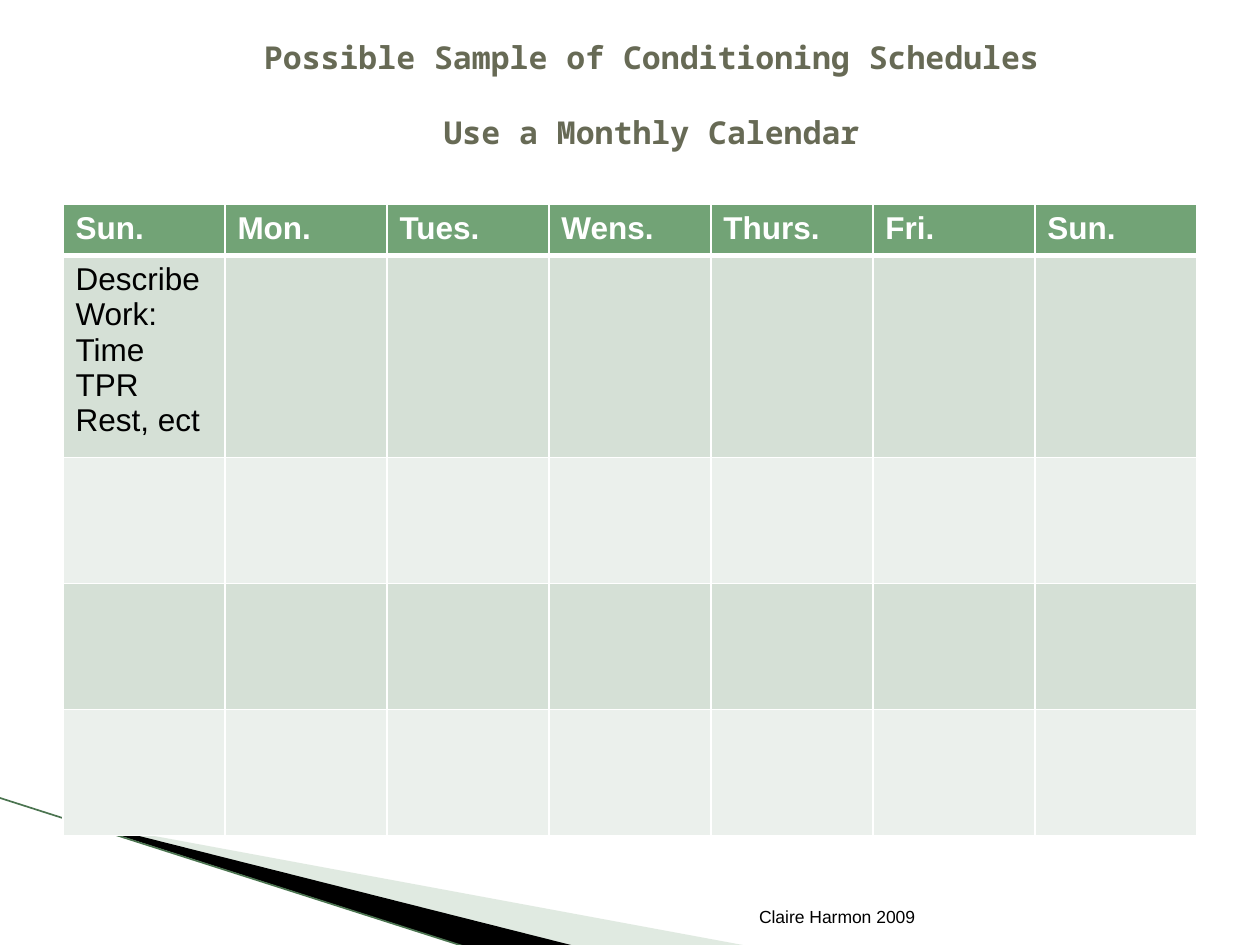
import pptx
import pptx.util
import pptx.dml.color
import pptx.enum.shapes
import pptx.enum.text
import pptx.oxml
import pptx.oxml.ns
from lxml import etree

WIDTH, HEIGHT = 10, 7.5
COLORS = {
    "white": "FFFFFF", "black": "000000", "title": "676A55", "header": "72A376",
    "odd": "D5E0D6", "even": "EBF0EC", "wedge": "B3CBB5", "line": "4B7450",
}
TITLE = ["Possible Sample of Conditioning Schedules", "Use a Monthly Calendar"]
DAYS = ["Sun.", "Mon.", "Tues.", "Wens.", "Thurs.", "Fri.", "Sun."]
FIRST_DAY = ["Describe", "Work:", "Time", "TPR", "Rest, ect"]
FOOTER = ["Claire Harmon 2009"]
ROW_HEIGHTS = [0.41, 1.6, 1, 1, 1]
TABLE_LEFT, TABLE_TOP, TABLE_WIDTH = 0.5, 1.62, 9
WEDGES = [
    ("wedge", 40, [(0.55, 6.51), (5.95, 7.51), (4.56, 7.51), (0.55, 6.5)]),
    ("black", 100, [(0.53, 6.49), (4.57, 7.51), (3.72, 7.52), (0.54, 6.5)]),
]
Inches, Pt = pptx.util.Inches, pptx.util.Pt
Align, Anchor = pptx.enum.text.PP_ALIGN, pptx.enum.text.MSO_ANCHOR


def rgb(name):
    return pptx.dml.color.RGBColor.from_string(COLORS[name])


def write(frame, lines, size=18, font="Arial", color="black", bold=False,
          align=Align.LEFT, anchor=Anchor.TOP, gap=0):
    frame.word_wrap = True
    frame.vertical_anchor = anchor
    for index, line in enumerate(lines):
        paragraph = frame.paragraphs[0] if index == 0 else frame.add_paragraph()
        paragraph.alignment = align
        paragraph.space_before = Pt(gap if index else 0)
        run = paragraph.add_run()
        run.text = line
        run.font.size, run.font.name, run.font.bold = Pt(size), font, bold
        run.font.color.rgb = rgb(color)


def add_wedge(slide, color, opacity, points):
    builder = slide.shapes.build_freeform(
        *(Inches(value) for value in points[0]))
    builder.add_line_segments([(Inches(x), Inches(y)) for x, y in points[1:]])
    shape = builder.convert_to_shape()
    shape.shadow.inherit = False
    shape.line.fill.background()
    shape.fill.solid()
    shape.fill.fore_color.rgb = rgb(color)
    if opacity < 100:
        fill = shape.fill._xPr.find(".//" + pptx.oxml.ns.qn("a:srgbClr"))
        etree.SubElement(fill, pptx.oxml.ns.qn("a:alpha"), val=str(opacity * 1000))


def add_border(cell, side, width):
    properties = cell._tc.get_or_add_tcPr()
    properties.append(pptx.oxml.parse_xml(
        f'<a:ln{side} {pptx.oxml.ns.nsdecls("a")} w="{Pt(width)}"><a:solidFill>'
        f'<a:srgbClr val="{COLORS["white"]}"/></a:solidFill></a:ln{side}>'))


def add_calendar(slide):
    table = slide.shapes.add_table(
        len(ROW_HEIGHTS), len(DAYS), Inches(TABLE_LEFT), Inches(TABLE_TOP),
        Inches(TABLE_WIDTH), Inches(sum(ROW_HEIGHTS))).table
    for row, height in zip(table.rows, ROW_HEIGHTS):
        row.height = Inches(height)
    for row_index, row in enumerate(table.rows):
        for column, cell in enumerate(row.cells):
            for side in "LRTB":
                heavy = (row_index, side) in ((0, "B"), (1, "T"))
                add_border(cell, side, 3 if heavy else 1)
            color = "header" if row_index == 0 else ("even", "odd")[row_index % 2]
            cell.fill.solid()
            cell.fill.fore_color.rgb = rgb(color)
            if row_index == 0:
                write(cell.text_frame, [DAYS[column]], color="white", bold=True)
    write(table.cell(1, 0).text_frame, FIRST_DAY)


def main():
    presentation = pptx.Presentation()
    presentation.slide_width = Inches(WIDTH)
    presentation.slide_height = Inches(HEIGHT)
    slide = presentation.slides.add_slide(presentation.slide_layouts[5])

    for wedge in WEDGES:
        add_wedge(slide, *wedge)
    edge = slide.shapes.add_connector(
        pptx.enum.shapes.MSO_CONNECTOR.STRAIGHT,
        Inches(-0.01), Inches(6.33), Inches(3.71), Inches(7.52))
    edge.line.color.rgb = rgb("line")
    edge.line.width = Pt(0.95)
    etree.SubElement(edge._element.spPr, pptx.oxml.ns.qn("a:effectLst"))

    add_calendar(slide)

    title = slide.shapes.title
    title.left, title.top = Inches(0.67), Inches(0.25)
    title.width, title.height = Inches(9), Inches(1.25)
    title.text_frame.auto_size = pptx.enum.text.MSO_AUTO_SIZE.NONE
    write(title.text_frame, TITLE, font="Noto Sans Mono", color="title",
          bold=True, align=Align.CENTER, gap=21.4)

    footer = slide.shapes.add_textbox(
        Inches(4.79), Inches(7.01), Inches(2.57), Inches(0.4))
    write(footer.text_frame, FOOTER, size=10, align=Align.RIGHT,
          anchor=Anchor.BOTTOM)
    presentation.save("out.pptx")


if __name__ == "__main__":
    main()
